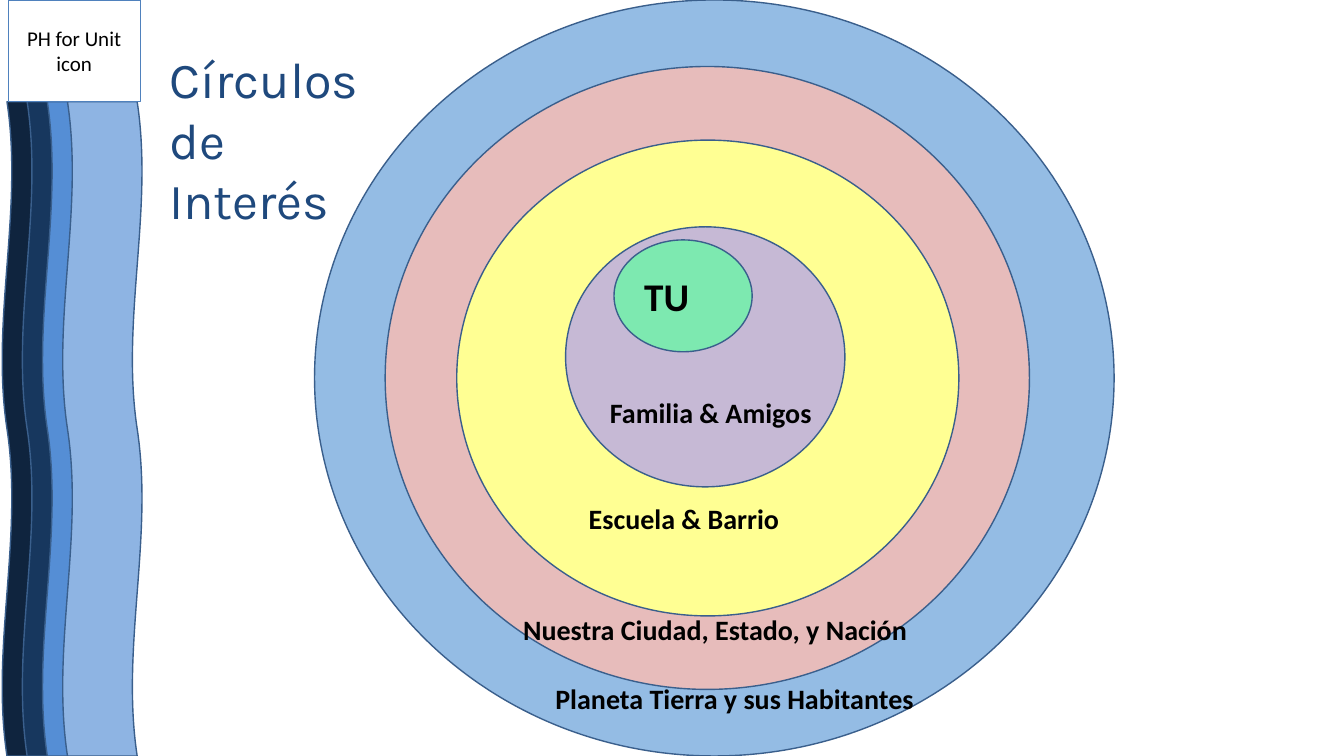
import dataclasses

import pptx
import pptx.dml.color
import pptx.enum.shapes
import pptx.enum.text
import pptx.util

PX = 9144  # one px is a hundredth of an inch
SHAPES = pptx.enum.shapes.MSO_SHAPE
ALIGN = pptx.enum.text.PP_ALIGN
ANCHOR = pptx.enum.text.MSO_ANCHOR

COLOURS = {
    "white": "FFFFFF",
    "black": "000000",
    "outline": "3A5F8C",
    "frame": "4F81BD",
    "title": "1F497D",
    "planet": "94BCE4",
    "nation": "E7BCBB",
    "school": "FFFF93",
    "family": "C6B9D5",
    "you": "7DE9B0",
}
WAVE_FILLS = ["0F243E", "17375E", "558ED5", "8EB4E3"]
WAVE_LEFT, WAVE_TOP, WAVE_STEP = -283, 386, 20
WAVE_WIDTH, WAVE_HEIGHT = 649, 79

LABEL_FONT = {"name": "Calibri", "size": pptx.util.Pt(20), "bold": True}
YOU_FONT = LABEL_FONT | {"size": pptx.util.Pt(28)}
ICON_FONT = {"name": "Calibri", "size": pptx.util.Pt(15), "bold": False}
TITLE_FONT = {"name": "Karla", "size": pptx.util.Pt(36), "bold": False}


@dataclasses.dataclass
class Box:
    left: int
    top: int
    width: int
    height: int

    def emu(self) -> list[int]:
        return [length * PX for length in dataclasses.astuple(self)]


@dataclasses.dataclass
class Circle:
    colour: str
    box: Box
    label: str
    label_box: Box | None = None  # None puts the label inside the circle


CIRCLES = [
    Circle("planet", Box(312, 0, 793, 750),
           "Planeta Tierra y sus Habitantes", Box(541, 671, 384, 56)),
    Circle("nation", Box(382, 66, 639, 618),
           "Nuestra Ciudad, Estado, y Nación", Box(509, 603, 416, 70)),
    Circle("school", Box(453, 139, 498, 472),
           "Escuela & Barrio", Box(574, 493, 279, 102)),
    Circle("family", Box(561, 225, 277, 258),
           "Familia & Amigos", Box(595, 387, 232, 69)),
    Circle("you", Box(609, 238, 137, 111), "TU"),
]


def rgb(value: str) -> pptx.dml.color.RGBColor:
    return pptx.dml.color.RGBColor.from_string(value)


def write(shape, text: str, font: dict, colour: str = "black",
          align=ALIGN.LEFT, anchor=ANCHOR.TOP) -> None:
    frame = shape.text_frame
    layout = {"word_wrap": True, "vertical_anchor": anchor,
              "auto_size": pptx.enum.text.MSO_AUTO_SIZE.NONE}
    for name, value in layout.items():
        setattr(frame, name, value)
    para = frame.paragraphs[0]
    para.alignment = align
    span = para.add_run()
    span.text = text
    for name, value in font.items():
        setattr(span.font, name, value)
    span.font.color.rgb = rgb(COLOURS[colour])


def draw(page, kind, box: Box, fill: str, line: str = "outline",
         weight: float = 1):
    shape = page.shapes.add_shape(kind, *box.emu())
    shape.shadow.inherit = False
    shape.fill.solid()
    shape.fill.fore_color.rgb = rgb(fill)
    shape.line.color.rgb = rgb(COLOURS[line])
    shape.line.width = pptx.util.Pt(weight)
    return shape


def draw_sidebar(page) -> None:
    for index, fill in enumerate(WAVE_FILLS):
        box = Box(WAVE_LEFT + index * WAVE_STEP, WAVE_TOP, WAVE_WIDTH, WAVE_HEIGHT)
        draw(page, SHAPES.DOUBLE_WAVE, box, fill).rotation = 270
    icon = draw(page, SHAPES.RECTANGLE, Box(8, 0, 131, 101),
                COLOURS["white"], "frame", 0.75)
    write(icon, "PH for Unit icon", ICON_FONT,
          align=ALIGN.CENTER, anchor=ANCHOR.MIDDLE)


def draw_circles(page) -> None:
    for circle in CIRCLES:
        oval = draw(page, SHAPES.OVAL, circle.box, COLOURS[circle.colour])
        if circle.label_box is None:
            write(oval, circle.label, YOU_FONT, anchor=ANCHOR.MIDDLE)
    # Labels go on top of every ring
    for circle in CIRCLES:
        if circle.label_box is not None:
            label = page.shapes.add_textbox(*circle.label_box.emu())
            write(label, circle.label, LABEL_FONT)


def place_title(page) -> None:
    title = page.shapes.title
    title.left, title.top, title.width, title.height = Box(158, 43, 242, 190).emu()
    write(title, "Círculos de Interés", TITLE_FONT, "title")


def main() -> None:
    deck = pptx.Presentation()
    deck.slide_width, deck.slide_height = 1333 * PX, 750 * PX
    page = deck.slides.add_slide(deck.slide_layouts.get_by_name("Title Only"))
    page.background.fill.solid()
    page.background.fill.fore_color.rgb = rgb(COLOURS["white"])
    draw_sidebar(page)
    draw_circles(page)
    place_title(page)
    deck.save("out.pptx")


if __name__ == "__main__":
    main()
